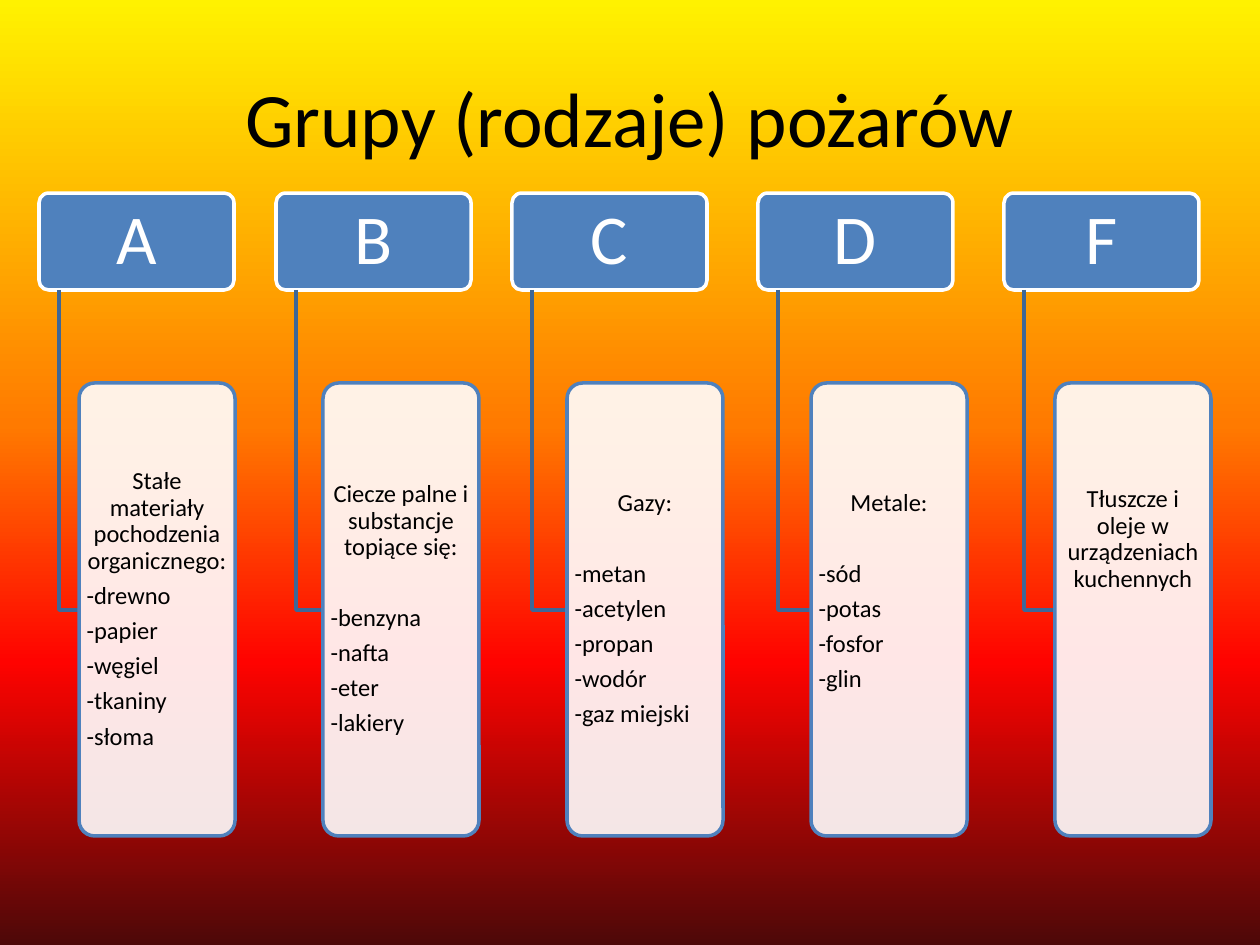
from lxml import etree
from pptx import Presentation, util as u
from pptx.dml.color import RGBColor
from pptx.enum import shapes, text
from pptx.oxml.ns import qn

PX = 914400 / 126
COLORS = {
    "header": "4F81BD", "header_line": "FFFFFF", "header_text": "FFFFFF",
    "card": "FFFFFF", "card_line": "4F81BD", "dark": "000000", "elbow": "3F6797",
}
BACKGROUND = [(0, "FFF200"), (45, "FF7A00"), (70, "FF0300"), (100, "4D0808")]
LINE_PITCH = 35
CARD_LEFT, CARD_PITCH = 79, 244
GROUPS = [
    {"letter": "A", "left": 39, "heading": "Stałe materiały pochodzenia organicznego:",
     "items": ["-drewno", "-papier", "-węgiel", "-tkaniny", "-słoma"], "gap": 0, "below": 0},
    {"letter": "B", "left": 276, "heading": "Ciecze palne i substancje topiące się:",
     "items": ["-benzyna", "-nafta", "-eter", "-lakiery"], "gap": 1, "below": 0},
    {"letter": "C", "left": 512, "heading": "Gazy:",
     "items": ["-metan", "-acetylen", "-propan", "-wodór", "-gaz miejski"], "gap": 1, "below": 0},
    {"letter": "D", "left": 758, "heading": "Metale:",
     "items": ["-sód", "-potas", "-fosfor", "-glin"], "gap": 1, "below": 1},
    {"letter": "F", "left": 1004, "heading": "Tłuszcze i oleje w urządzeniach kuchennych",
     "items": [], "gap": 0, "below": 4},
]


def px(length):
    return u.Emu(round(length * PX))


def rgb(name):
    return RGBColor.from_string(COLORS[name])


def apply(target, values):
    for name, value in values.items():
        setattr(target, name, value)


def outline(shape, color):
    shape.shadow.inherit = False
    shape.line.color.rgb = rgb(color)
    shape.line.width = u.Pt(2)


def write(paragraph, content, size, color, align, before=0, after=5, spacing=0.9):
    apply(paragraph, {"alignment": align, "line_spacing": spacing,
                      "space_before": u.Pt(before), "space_after": u.Pt(after)})
    run = paragraph.add_run()
    run.text = content
    apply(run.font, {"size": u.Pt(size), "name": "Calibri"})
    run.font.color.rgb = rgb(color)


def add_box(slide, box, fill, line, margin):
    shape = slide.shapes.add_shape(shapes.MSO_SHAPE.ROUNDED_RECTANGLE, *map(px, box))
    shape.adjustments[0] = 0.1
    shape.fill.solid()
    shape.fill.fore_color.rgb = rgb(fill)
    outline(shape, line)
    apply(shape.text_frame, {
        "word_wrap": True, "vertical_anchor": text.MSO_ANCHOR.MIDDLE,
        "margin_left": px(margin), "margin_right": px(margin),
        "margin_top": px(margin), "margin_bottom": px(margin)})
    return shape


def add_background(slide):
    fill = slide.background.fill
    fill.gradient()
    fill.gradient_angle = 270
    stops = slide.element.find(".//" + qn("a:gsLst"))
    for stop in list(stops):
        stops.remove(stop)
    for percent, color in BACKGROUND:
        stop = etree.SubElement(stops, qn("a:gs"), pos=str(percent * 1000))
        etree.SubElement(stop, qn("a:srgbClr"), val=color)


def add_title(slide, box, content):
    title = slide.shapes.title
    apply(title, dict(zip(("left", "top", "width", "height"), map(px, box))))
    title.text_frame.vertical_anchor = text.MSO_ANCHOR.MIDDLE
    write(title.text_frame.paragraphs[0], content, 44, "dark",
          text.PP_ALIGN.CENTER, after=0, spacing=1.0)


def add_header(slide, box, letter):
    header = add_box(slide, box, "header", "header_line", 8)
    write(header.text_frame.paragraphs[0], letter, 40, "header_text",
          text.PP_ALIGN.CENTER, after=0)


def add_elbow(slide, start, end):
    builder = slide.shapes.build_freeform(*start, scale=PX)
    builder.add_line_segments([(start[0], end[1]), end], close=False)
    elbow = builder.convert_to_shape()
    elbow.fill.background()
    outline(elbow, "elbow")


def add_card(slide, box, group):
    card = add_box(slide, box, "card", "card_line", 3)
    color = card.element.spPr.find(qn("a:solidFill"))[0]
    etree.SubElement(color, qn("a:alpha"), val="90000")
    frame = card.text_frame
    frame.margin_bottom = px(3 + group["below"] * LINE_PITCH)
    write(frame.paragraphs[0], group["heading"], 14, "dark", text.PP_ALIGN.CENTER)
    for index, item in enumerate(group["items"]):
        before = 20 * group["gap"] if index == 0 else 0
        write(frame.add_paragraph(), item, 14, "dark", text.PP_ALIGN.LEFT, before)


def add_group(slide, box, card_left, group):
    left, top, width, height = box
    header_height, card_top = 97, top + 190
    add_header(slide, (left, top, width, header_height), group["letter"])
    add_elbow(slide, (left + 20, top + header_height), (card_left, top + 417))
    add_card(slide, (card_left, card_top, 156, top + height - card_top), group)


def main():
    presentation = Presentation()
    apply(presentation, {"slide_width": px(1260), "slide_height": px(945)})
    slide = presentation.slides.add_slide(presentation.slide_layouts[5])
    add_background(slide)
    add_title(slide, (63, 38, 1134, 157), "Grupy (rodzaje) pożarów")
    for index, group in enumerate(GROUPS):
        add_group(slide, (group["left"], 193, 195, 643),
                  CARD_LEFT + index * CARD_PITCH, group)
    presentation.save("out.pptx")


if __name__ == "__main__":
    main()
